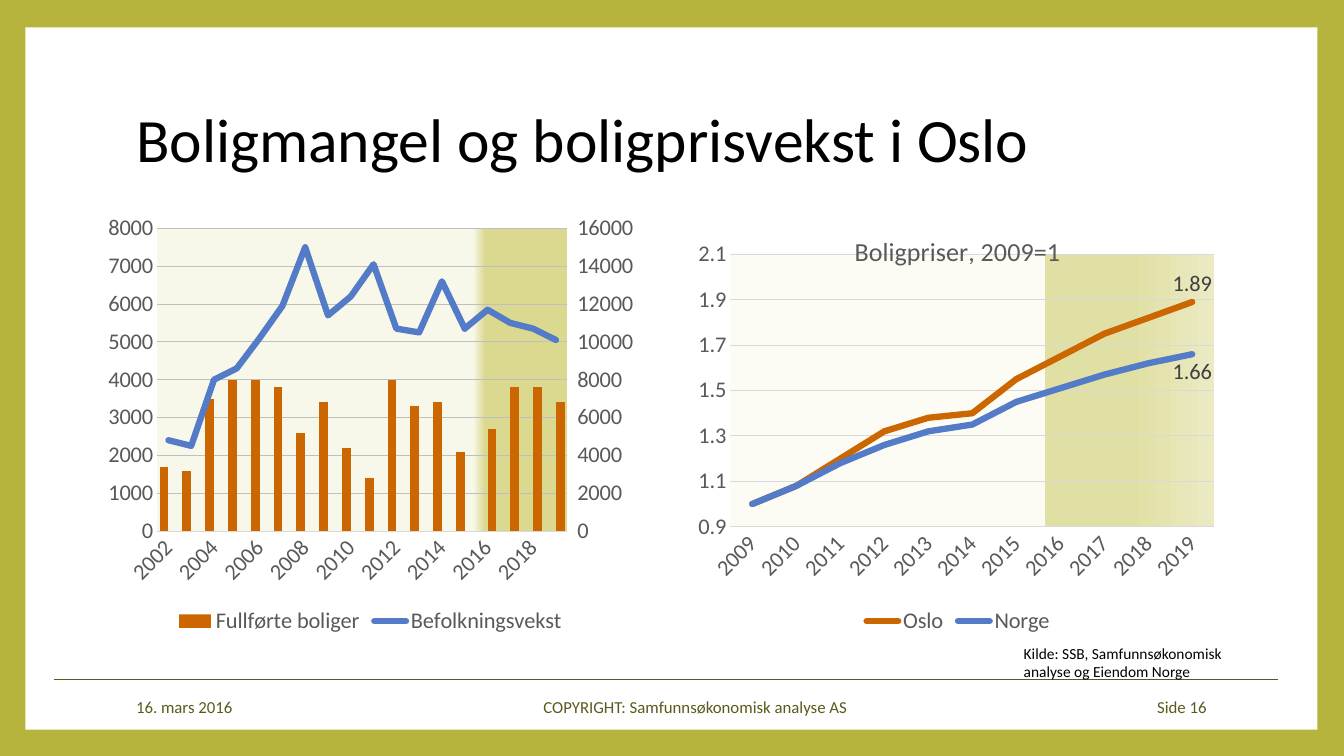
from lxml import etree
from pptx import Presentation, util as u
from pptx.chart import axis as ax, data as cd
from pptx.dml.color import RGBColor
from pptx.enum import chart as ec, shapes as es, text as et
from pptx.oxml import parse_xml
from pptx.oxml.ns import nsdecls, qn

GREY, OLIVE, RUST, BLUE = "595959", "5B5A1D", "CC6600", "537BC7"
NONE = ec.XL_TICK_MARK.NONE
ALIGN = et.PP_ALIGN


def rgb(code):
    return RGBColor.from_string(code)


def style(font, size, color):
    font.name, font.size, font.bold = "Calibri", u.Pt(size), False
    font.color.rgb = rgb(color)


def box(x, y, w, h):
    return [u.Cm(v) for v in (x, y, w, h)]


def write(frame, words, size=12, color="000000", align=ALIGN.LEFT,
          anchor=et.MSO_ANCHOR.MIDDLE, space=None):
    """Fill a text frame, one paragraph for each line of words."""
    frame.text = words
    frame.word_wrap = True
    frame.vertical_anchor = anchor
    for para in frame.paragraphs:
        para.alignment, para.line_spacing = align, space
        style(para.font, size, color)


def label(slide, words, place, **form):
    write(slide.shapes.add_textbox(*box(*place)).text_frame, words, **form)


def frame(slide, x, y, w, h):
    """Olive background with a white panel and a rule above the footer."""
    slide.background.fill.solid()
    slide.background.fill.fore_color.rgb = rgb("B6B43C")
    panel = slide.shapes.add_shape(es.MSO_SHAPE.RECTANGLE, *box(x, y, w, h))
    panel.shadow.inherit = False
    panel.fill.solid()
    panel.fill.fore_color.rgb = rgb("FFFFFF")
    panel.line.fill.background()
    slide.shapes._spTree.insert(2, panel._element)
    left, right, base = u.Cm(x + 0.73), u.Cm(x + w - 0.99), u.Cm(y + 16.43)
    rule = slide.shapes.add_connector(es.MSO_CONNECTOR.STRAIGHT, left, base, right, base)
    rule.line.color.rgb, rule.line.width = rgb(OLIVE), u.Pt(0.5)
    etree.SubElement(rule._element.spPr, qn("a:effectLst"))


def head(slide, words, place):
    title = slide.shapes.title
    title.left, title.top, title.width, title.height = box(*place)
    write(title.text_frame, words, size=44, space=0.9)


def foot(slide, x, y, w, h):
    parts = [("16. mars 2016", 0, 6.48, ALIGN.LEFT),
             ("COPYRIGHT: Samfunnsøkonomisk analyse AS", 7.79, 13.11, ALIGN.CENTER),
             ("Side 16", w - 4.75, 4.75, ALIGN.RIGHT)]
    for words, dx, wide, align in parts:
        label(slide, words, (x + dx, y, wide, h), color=OLIVE, align=align)


def layout(x, y, w=None, h=None):
    """Manual layout in shares of the chart; with a size, the inner plot."""
    spots = {"xMode": "edge", "yMode": "edge", "x": x, "y": y}
    if w:
        spots = {"layoutTarget": "inner", **spots, "w": w, "h": h}
    tags = "".join(f'<c:{k} val="{v}"/>' for k, v in spots.items())
    return parse_xml(f'<c:layout {nsdecls("c")}><c:manualLayout>{tags}'
                     '</c:manualLayout></c:layout>')


def shade(stops, turn):
    """Gradient fill for the plot area."""
    marks = "".join(f'<a:gs pos="{p * 1000}"><a:srgbClr val="{c}"/></a:gs>'
                    for p, c in stops)
    return parse_xml(f'<c:spPr {nsdecls("c", "a")}><a:gradFill><a:gsLst>{marks}</a:gsLst>'
                     f'<a:lin ang="{turn * 60000}" scaled="0"/></a:gradFill></c:spPr>')


def scale(axis, low, high, step, form="0"):
    axis.minimum_scale, axis.maximum_scale, axis.major_unit = low, high, step
    axis.major_tick_mark = NONE
    axis.format.line.fill.background()
    axis.tick_labels.number_format = form
    axis.tick_labels.number_format_is_linked = False
    style(axis.tick_labels.font, 16, GREY)


def stroke(series, color):
    series.smooth = False
    series.marker.style = ec.XL_MARKER_STYLE.NONE
    series.format.line.color.rgb, series.format.line.width = rgb(color), u.Pt(4.5)
    series._element.find(".//" + qn("a:ln")).set("cap", "rnd")


def plot(slide, kind, place, years, rows, grid, thick, area, fill):
    """Chart with shared axes, legend and plot area; rows 2 and 4 are forecasts."""
    data = cd.CategoryChartData()
    data.categories = [str(n) for n in years]
    for name, vals in rows:
        data.add_series(name, vals)
    chart = slide.shapes.add_chart(kind, *box(*place), data).chart
    style(chart.font, 16, "000000")
    chart.has_title = False
    chart.has_legend = True
    key = chart.legend
    key.position, key.include_in_layout = ec.XL_LEGEND_POSITION.BOTTOM, False
    style(key.font, 16, GREY)
    for n in (3, 1):
        key._element.find(qn("c:legendPos")).addnext(parse_xml(
            f'<c:legendEntry {nsdecls("c")}><c:idx val="{n}"/>'
            '<c:delete val="1"/></c:legendEntry>'))
    cats = chart.category_axis
    cats.major_tick_mark = NONE
    cats.format.line.color.rgb, cats.format.line.width = rgb("D9D9D9"), u.Pt(0.75)
    style(cats.tick_labels.font, 16, GREY)
    cats._element.find(".//" + qn("a:bodyPr")).set("rot", "-2700000")
    lines = chart.value_axis.major_gridlines.format.line
    lines.color.rgb, lines.width = rgb(grid), u.Pt(thick)
    zone = chart._chartSpace.chart.plotArea
    for old in zone.findall(qn("c:layout")):
        zone.remove(old)
    zone.insert(0, layout(*area))
    zone.append(shade(*fill))
    chart._chartSpace.chart.addnext(parse_xml(
        f'<c:spPr {nsdecls("c", "a")}><a:solidFill><a:srgbClr val="FFFFFF"/></a:solidFill>'
        '<a:ln><a:noFill/></a:ln></c:spPr>'))
    return chart


def second(chart):
    """Move the last two series to lines on a right-hand axis."""
    zone = chart._chartSpace.chart.plotArea
    bars = zone.find(qn("c:barChart"))
    lines = parse_xml(f'<c:lineChart {nsdecls("c")}><c:grouping val="standard"/>'
                      '<c:varyColors val="0"/><c:marker val="1"/>'
                      '<c:axId val="501"/><c:axId val="502"/></c:lineChart>')
    for ser in bars.findall(qn("c:ser"))[2:]:
        for flag in ser.findall(qn("c:invertIfNegative")):
            ser.remove(flag)
        lines.find(qn("c:marker")).addprevious(ser)
    bars.addnext(lines)
    start = '<c:scaling><c:orientation val="minMax"/></c:scaling><c:delete val="{}"/>'
    cats = parse_xml(f'<c:catAx {nsdecls("c")}><c:axId val="501"/>{start.format(1)}'
                     '<c:axPos val="b"/><c:crossAx val="502"/></c:catAx>')
    vals = parse_xml(f'<c:valAx {nsdecls("c")}><c:axId val="502"/>{start.format(0)}'
                     '<c:axPos val="r"/><c:tickLblPos val="nextTo"/><c:crossAx val="501"/>'
                     '<c:crosses val="max"/><c:crossBetween val="between"/></c:valAx>')
    last = zone.findall(qn("c:valAx"))[-1]
    last.addnext(cats)
    last.addnext(vals)
    return ax.ValueAxis(vals)


def homes(slide, place):
    gap = [None]
    rows = [("Fullførte boliger", [1700, 1600, 3500, 4000, 4000, 3800, 2600, 3400, 2200,
                                   1400, 4000, 3300, 3400, 2100] + gap * 4),
            ("Series 2", gap * 14 + [2700, 3800, 3800, 3400]),
            ("Befolkningsvekst", [4800, 4500, 8000, 8600, 10200, 11900, 15000, 11400, 12400,
                                  14100, 10700, 10500, 13200, 10700] + gap * 4),
            ("Series 4", gap * 13 + [10700, 11700, 11000, 10700, 10100])]
    chart = plot(slide, ec.XL_CHART_TYPE.COLUMN_CLUSTERED, place, range(2002, 2020), rows,
                 "BFBFBF", 0.5, (0.11, 0.05, 0.75, 0.7),
                 ([(20, "DAD98F"), (23, "F8F8EA")], 180))
    scale(chart.value_axis, 0, 8000, 1000)
    right = second(chart)
    scale(right, 0, 16000, 2000)
    right.major_tick_mark = ec.XL_TICK_MARK.OUTSIDE
    chart.category_axis._element.find(qn("c:noMultiLvlLbl")).addprevious(
        parse_xml(f'<c:tickLblSkip {nsdecls("c")} val="2"/>'))
    bars, lines = chart.plots
    bars.gap_width, bars.overlap, bars.vary_by_categories = 58, 0, False
    for ser in bars.series:
        ser.format.fill.solid()
        ser.format.fill.fore_color.rgb = rgb(RUST)
    for ser in lines.series:
        stroke(ser, BLUE)


def prices(slide, place):
    gap = [None]
    rows = [("Oslo", [1, 1.08, 1.2, 1.32, 1.38, 1.4, 1.55] + gap * 4),
            ("Series 2", gap * 6 + [1.55, 1.65, 1.75, 1.82, 1.89]),
            ("Norge", [1, 1.08, 1.18, 1.26, 1.32, 1.35, 1.45] + gap * 4),
            ("Series 4", gap * 6 + [1.45, 1.51, 1.57, 1.62, 1.66])]
    chart = plot(slide, ec.XL_CHART_TYPE.LINE, place, range(2009, 2020), rows,
                 "D9D9D9", 0.75, (0.1, 0.11, 0.85, 0.63),
                 ([(0, "FCFCF5"), (65, "FCFCF5"), (65, "E1E0A4"), (83, "E1E0A4"),
                   (100, "EBEAC3")], 0))
    scale(chart.value_axis, 0.9, 2.1, 0.2, "0.0")
    title = chart.chart_title
    write(title.text_frame, "Boligpriser, 2009=1", size=18.6, color=GREY, align=ALIGN.CENTER)
    for old in title._element.findall(qn("c:layout")):
        title._element.remove(old)
    title._element.find(qn("c:tx")).addnext(layout(0.31, 0.05))
    chart.plots[0].vary_by_categories = False
    series = list(chart.plots[0].series)
    for ser, color in zip(series, (RUST, RUST, BLUE, BLUE)):
        stroke(ser, color)
    spots = ec.XL_LABEL_POSITION
    for ser, spot in ((series[1], spots.ABOVE), (series[3], spots.BELOW)):
        tag = ser.points[10].data_label
        style(tag.font, 16, "404040")
        tag.position = spot
        ser.data_labels.show_value = False


def main():
    deck = Presentation()
    deck.slide_width, deck.slide_height = u.Cm(33.87), u.Cm(19.05)
    slide = deck.slides.add_slide(deck.slide_layouts[5])
    frame(slide, 0.64, 0.69, 32.56, 17.7)
    head(slide, "Boligmangel og boligprisvekst i Oslo", (3.18, 1.7, 27.43, 3.76))
    foot(slide, 3.18, 17.3, 27.48, 1.02)
    label(slide, "Kilde: SSB, Samfunnsøkonomisk\nanalyse og Eiendom Norge",
          (25.55, 16.1, 5.79, 1.19), size=11, anchor=et.MSO_ANCHOR.TOP)
    homes(slide, (2.44, 5.21, 13.79, 10.9))
    prices(slide, (16.97, 5.21, 14.35, 10.9))
    deck.save("out.pptx")


if __name__ == "__main__":
    main()
